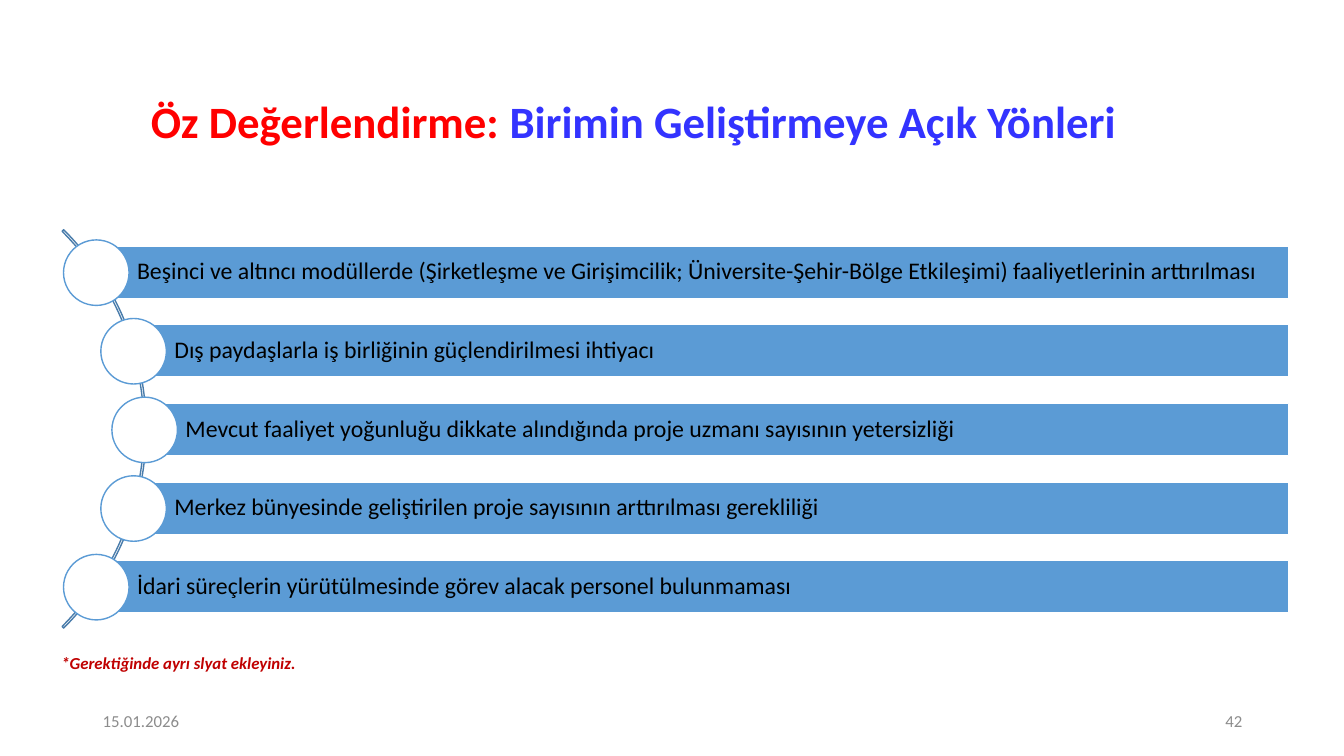
import math

from pptx import Presentation
from pptx import util as u
from pptx.dml import color
from pptx.enum import shapes, text

PX = 9144
ARC_X, ARC_Y, ARC_R = -134, 426, 277
PITCH, BAR_H, CIRCLE_D, BAR_RIGHT = 78, 52, 65, 1278
NEEDS = [
    "Beşinci ve altıncı modüllerde (Şirketleşme ve Girişimcilik; Üniversite-Şehir-Bölge Etkileşimi) faaliyetlerinin arttırılması",
    "Dış paydaşlarla iş birliğinin güçlendirilmesi ihtiyacı",
    "Mevcut faaliyet yoğunluğu dikkate alındığında proje uzmanı sayısının yetersizliği",
    "Merkez bünyesinde geliştirilen proje sayısının arttırılması gerekliliği",
    "İdari süreçlerin yürütülmesinde görev alacak personel bulunmaması",
]


def px(n):
    return u.Emu(n * PX)


def rgb(h):
    return color.RGBColor.from_string(h)


def add_run(p, words, size, hue, bold=False, italic=False):
    r = p.add_run()
    r.text = words
    r.font.name = "Calibri"
    r.font.size = u.Pt(size)
    r.font.bold = bold
    r.font.italic = italic
    r.font.color.rgb = rgb(hue)


def add_shape(s, kind, box, line, fill=None):
    sp = s.shapes.add_shape(kind, *map(px, box))
    sp.shadow.inherit = False
    if fill:
        sp.fill.solid()
        sp.fill.fore_color.rgb = rgb(fill)
    else:
        sp.fill.background()
    sp.line.color.rgb = rgb(line)
    sp.line.width = u.Pt(1)
    return sp


def add_title(s):
    sp = s.shapes.title
    sp.left, sp.top, sp.width, sp.height = map(px, (79, 84, 1099, 77))
    tf = sp.text_frame
    tf.auto_size = text.MSO_AUTO_SIZE.NONE
    tf.vertical_anchor = text.MSO_ANCHOR.MIDDLE
    p = tf.paragraphs[0]
    p.alignment = text.PP_ALIGN.CENTER
    p.line_spacing = 0.9
    add_run(p, "Öz Değerlendirme: ", 32, "FF0000", bold=True)
    add_run(p, "Birimin Geliştirmeye Açık Yönleri", 32, "3333FF", bold=True)


def add_arc(s):
    sp = add_shape(s, shapes.MSO_SHAPE.BLOCK_ARC, (-414, 146, 559, 559), "497CAB")
    for i, value in enumerate((189, 27, 0.004)):
        sp.adjustments[i] = value


def add_need(s, step, words):
    drop = step * PITCH
    x = ARC_X + round(math.sqrt(ARC_R ** 2 - drop ** 2))
    y = ARC_Y + drop
    bar = add_shape(s, shapes.MSO_SHAPE.RECTANGLE,
                    (x, y - BAR_H // 2, BAR_RIGHT - x, BAR_H), "FFFFFF", "5B9BD5")
    tf = bar.text_frame
    tf.word_wrap = True
    tf.vertical_anchor = text.MSO_ANCHOR.MIDDLE
    tf.margin_left = px(41)
    tf.margin_top = tf.margin_right = tf.margin_bottom = px(5)
    p = tf.paragraphs[0]
    p.alignment = text.PP_ALIGN.LEFT
    p.line_spacing = 0.9
    add_run(p, words, 17, "000000")
    half = CIRCLE_D // 2
    add_shape(s, shapes.MSO_SHAPE.OVAL,
              (x - half, y - half, CIRCLE_D, CIRCLE_D), "5B9BD5", "FFFFFF")


def add_label(s, box, words, hue, align=text.PP_ALIGN.LEFT,
              anchor=text.MSO_ANCHOR.MIDDLE, strong=False):
    tf = s.shapes.add_textbox(*map(px, box)).text_frame
    tf.word_wrap = True
    tf.vertical_anchor = anchor
    p = tf.paragraphs[0]
    p.alignment = align
    add_run(p, words, 12, hue, bold=strong, italic=strong)


def main():
    prs = Presentation()
    prs.slide_width, prs.slide_height = px(1333), px(750)
    s = prs.slides.add_slide(prs.slide_layouts[5])
    add_title(s)
    add_arc(s)
    for i, words in enumerate(NEEDS):
        add_need(s, i - len(NEEDS) // 2, words)
    add_label(s, (92, 695, 300, 40), "15.01.2026", "8C8C8C")
    add_label(s, (942, 695, 300, 40), "42", "8C8C8C", align=text.PP_ALIGN.RIGHT)
    add_label(s, (51, 643, 500, 30), "*Gerektiğinde ayrı slyat ekleyiniz.", "C00000",
              anchor=text.MSO_ANCHOR.TOP, strong=True)
    prs.save("out.pptx")


if __name__ == "__main__":
    main()
